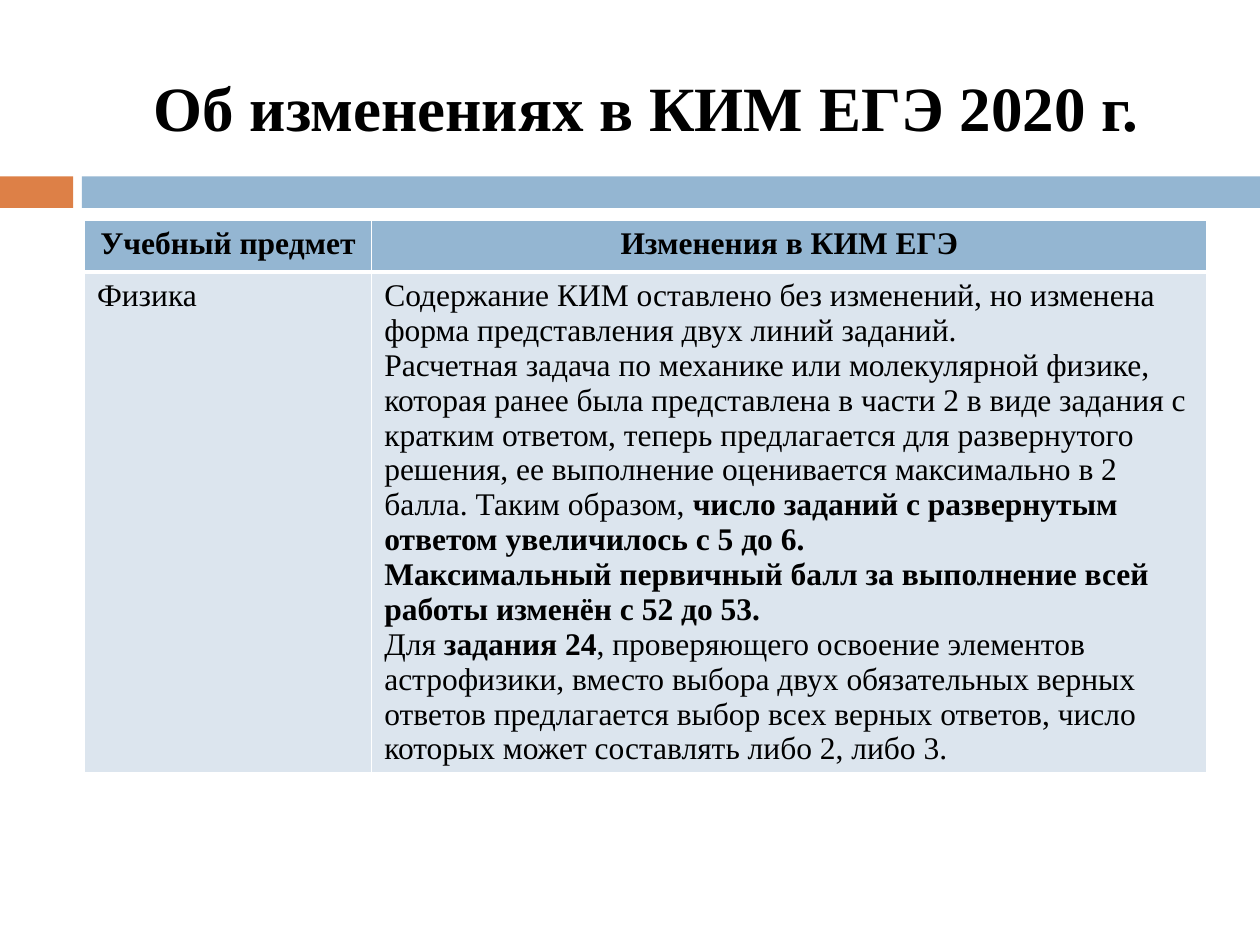
from lxml.etree import SubElement
from pptx import Presentation
from pptx.dml.color import RGBColor
from pptx.enum.shapes import MSO_SHAPE as Shape
from pptx.enum.text import MSO_ANCHOR as Anchor, PP_ALIGN as Align
from pptx.oxml.ns import qn
from pptx.util import Inches, Pt

FONT = "Times New Roman"
BLACK, WHITE = "000000", "FFFFFF"
ORANGE, BLUE, PALE = "DD8047", "94B6D2", "DCE5EE"

HEADER = ["Учебный предмет", "Изменения в КИМ ЕГЭ"]
SUBJECT = [[("Физика", False)]]
CHANGES = [
    [("Содержание КИМ оставлено без изменений, но изменена форма представления "
      "двух линий заданий.", False)],
    [("Расчетная задача по механике или молекулярной физике, которая ранее была "
      "представлена в части 2 в виде задания с кратким ответом, теперь предлагается "
      "для развернутого решения, ее выполнение оценивается максимально в 2 балла. "
      "Таким образом, ", False),
     ("число заданий с развернутым ответом увеличилось с 5 до 6.", True)],
    [("Максимальный первичный балл за выполнение всей работы изменён с 52 до 53.", True)],
    [("Для ", False),
     ("задания 24", True),
     (", проверяющего освоение элементов астрофизики, вместо выбора двух обязательных "
      "верных ответов предлагается выбор всех верных ответов, число которых может "
      "составлять либо 2, либо 3.", False)],
]


def paint(fill, color):
    fill.solid()
    fill.fore_color.rgb = RGBColor.from_string(color)


def write(frame, paragraphs, size, align):
    for index, spans in enumerate(paragraphs):
        para = frame.paragraphs[0] if index == 0 else frame.add_paragraph()
        para.alignment = align
        for text, bold in spans:
            span = para.add_run()
            span.text = text
            span.font.name = FONT
            span.font.size = Pt(size)
            span.font.bold = bold
            span.font.color.rgb = RGBColor.from_string(BLACK)


def add_bar(page, left, width, color):
    bar = page.shapes.add_shape(
        Shape.RECTANGLE, Inches(left), Inches(1.4), Inches(width), Inches(0.25))
    bar.shadow.inherit = False
    bar.line.fill.background()
    paint(bar.fill, color)


def set_title(page, text):
    box = page.shapes.title
    box.left, box.top = Inches(0.67), Inches(0.25)
    box.width, box.height = Inches(8.92), Inches(1.08)
    frame = box.text_frame
    frame.vertical_anchor = Anchor.MIDDLE
    frame.margin_top = Inches(0.15)
    write(frame, [[(text, True)]], 36, Align.CENTER)


def set_borders(cell, top, bottom):
    properties = cell._tc.get_or_add_tcPr()
    for side, width in (("L", 1), ("R", 1), ("T", top), ("B", bottom)):
        line = SubElement(properties, qn(f"a:ln{side}"), w=str(Pt(width)))
        SubElement(SubElement(line, qn("a:solidFill")), qn("a:srgbClr"), val=WHITE)


def add_changes_table(page):
    widths, heights = (2.28, 6.63), (0.41, 3.97)
    table = page.shapes.add_table(
        2, 2, Inches(0.67), Inches(1.75), Inches(sum(widths)), Inches(sum(heights))).table
    for column, width in zip(table.columns, widths):
        column.width = Inches(width)
    for row, height in zip(table.rows, heights):
        row.height = Inches(height)

    rows = [
        ([[[(text, True)]] for text in HEADER], BLUE, Align.CENTER, 1, 3),
        ([SUBJECT, CHANGES], PALE, Align.LEFT, 3, 1),
    ]
    for row, (contents, color, align, top, bottom) in zip(table.rows, rows):
        for cell, paragraphs in zip(row.cells, contents):
            set_borders(cell, top, bottom)
            paint(cell.fill, color)
            write(cell.text_frame, paragraphs, 18, align)


def main():
    deck = Presentation()
    deck.slide_width, deck.slide_height = Inches(10), Inches(7.5)
    page = deck.slides.add_slide(deck.slide_layouts[5])
    paint(page.background.fill, WHITE)
    add_bar(page, 0, 0.58, ORANGE)
    add_bar(page, 0.65, 9.35, BLUE)
    set_title(page, "Об изменениях в КИМ ЕГЭ 2020 г.")
    add_changes_table(page)
    deck.save("out.pptx")


if __name__ == "__main__":
    main()
